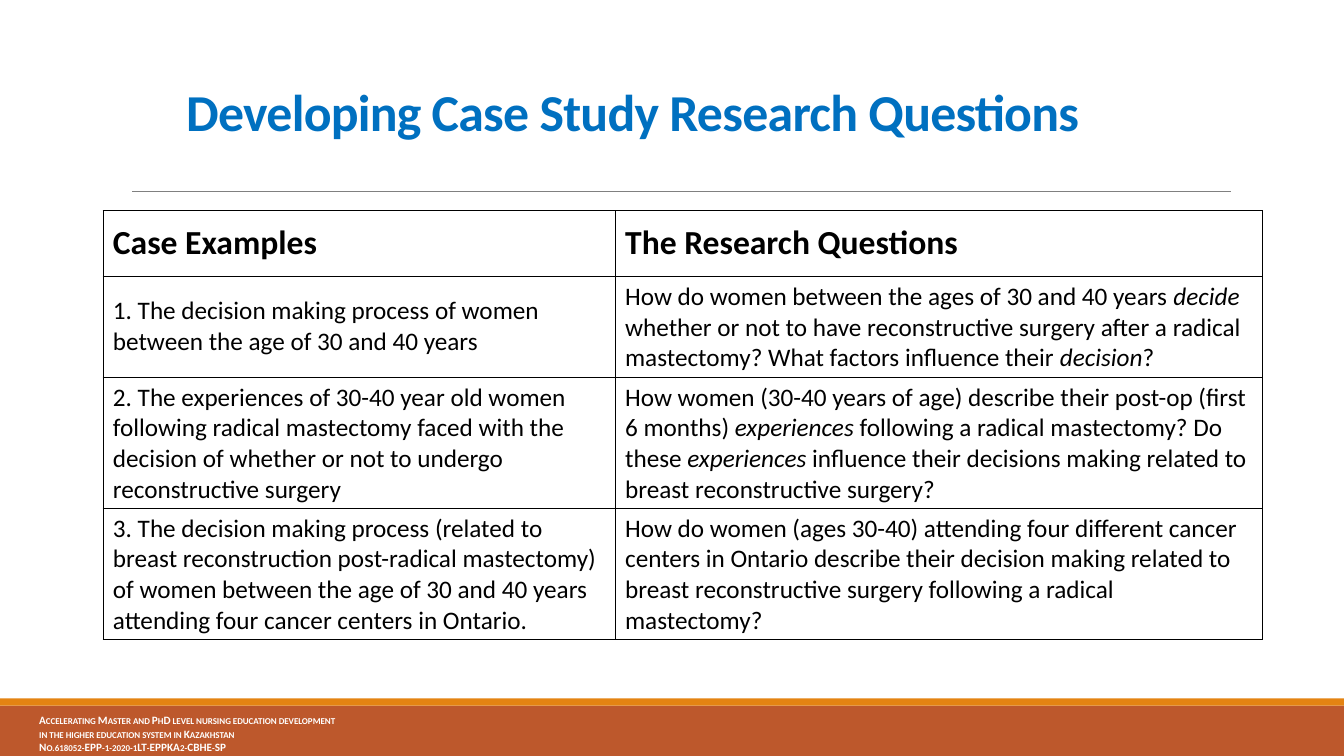
from dataclasses import dataclass
from lxml.etree import SubElement
from pptx import Presentation
from pptx.dml.color import RGBColor
from pptx.enum.shapes import MSO_CONNECTOR, MSO_SHAPE
from pptx.enum.text import MSO_ANCHOR, PP_ALIGN
from pptx.oxml.ns import qn
from pptx.util import Inches, Pt


@dataclass
class Theme:
    font: str = "Calibri"
    title: str = "0070C0"
    ink: str = "000000"
    paper: str = "FFFFFF"
    rule: str = "808080"
    rust: str = "BD582C"
    amber: str = "E48312"
    large: int = 37
    head: int = 24
    body: int = 18
    small: int = 8


class Deck:
    """Draws each kind of element on the current slide in one theme."""

    def __init__(self, theme):
        self.theme = theme
        self.file = Presentation()
        self.file.slide_width = Inches(13.33)
        self.file.slide_height = Inches(7.5)
        self.slide = self.file.slides.add_slide(self.file.slide_layouts[6])

    def band(self, top, height, color):
        shape = self.slide.shapes.add_shape(
            MSO_SHAPE.RECTANGLE, 0, Inches(top), self.file.slide_width, Inches(height))
        shape.shadow.inherit = False
        shape.fill.solid()
        shape.fill.fore_color.rgb = RGBColor.from_string(color)
        shape.line.fill.background()

    def rule(self, left, right, top):
        line = self.slide.shapes.add_connector(
            MSO_CONNECTOR.STRAIGHT, Inches(left), Inches(top), Inches(right), Inches(top))
        line.line.color.rgb = RGBColor.from_string(self.theme.rule)
        line.line.width = Pt(0.5)
        SubElement(line._element.spPr, qn("a:effectLst"))

    def run(self, para, text, size, color, bold=False, italic=False, **extra):
        run = para.add_run()
        run.text = text
        font = run.font
        font.name, font.size = self.theme.font, Pt(size)
        font.bold, font.italic = bold, italic
        font.color.rgb = RGBColor.from_string(color)
        for key, value in extra.items():
            run._r.get_or_add_rPr().set(key, value)

    def text(self, box, lines, size, color, align=PP_ALIGN.LEFT,
             anchor=MSO_ANCHOR.TOP, space=1.0, **extra):
        frame = self.slide.shapes.add_textbox(*map(Inches, box)).text_frame
        frame.word_wrap = True
        frame.vertical_anchor = anchor
        for i, line in enumerate(lines):
            para = frame.add_paragraph() if i else frame.paragraphs[0]
            para.alignment, para.line_spacing = align, space
            self.run(para, line, size, color, bold=True, **extra)

    def border(self, cell):
        props = cell._tc.get_or_add_tcPr()
        for side in "LRTB":
            line = SubElement(props, qn(f"a:ln{side}"), w=str(Pt(0.48)))
            fill = SubElement(line, qn("a:solidFill"))
            SubElement(fill, qn("a:srgbClr"), val=self.theme.ink)

    def table(self, box, wide, high, rows):
        grid = self.slide.shapes.add_table(
            len(rows), len(wide), *map(Inches, box)).table
        for col, width in zip(grid.columns, wide):
            col.width = Inches(width)
        for i, (row, height) in enumerate(zip(rows, high)):
            grid.rows[i].height = Inches(height)
            size = self.theme.body if i else self.theme.head
            for j, words in enumerate(row):
                cell = grid.cell(i, j)
                self.border(cell)
                cell.fill.background()
                cell.vertical_anchor = MSO_ANCHOR.MIDDLE
                para = cell.text_frame.paragraphs[0]
                for k, part in enumerate(words.split("*")):
                    self.run(para, part, size, self.theme.ink, i == 0, k % 2 == 1)


ROWS = [
    ("Case Examples", "The Research Questions"),
    ("1. The decision making process of women between the age of 30 and 40 years",
     "How do women between the ages of 30 and 40 years *decide *whether or not to have "
     "reconstructive surgery after a radical mastectomy? What factors influence their "
     "*decision*?"),
    ("2. The experiences of 30-40 year old women following radical mastectomy faced with "
     "the decision of whether or not to undergo reconstructive surgery",
     "How women (30-40 years of age) describe their post-op (first 6 months) *experiences "
     "*following a radical mastectomy? Do these *experiences *influence their decisions "
     "making related to breast reconstructive surgery?"),
    ("3. The decision making process (related to breast reconstruction post-radical "
     "mastectomy) of women between the age of 30 and 40 years attending four cancer "
     "centers in Ontario.",
     "How do women (ages 30-40) attending four different cancer centers in Ontario "
     "describe their decision making related to breast reconstructive surgery following "
     "a radical mastectomy?"),
]
FOOT = [
    "Accelerating Master and PhD level nursing education development",
    "in the higher education system in Kazakhstan",
    "No.618052-EPP-1-2020-1LT-EPPKA2-CBHE-SP",
]


def main():
    theme = Theme()
    deck = Deck(theme)
    deck.band(7, 0.5, theme.rust)
    deck.band(6.93, 0.07, theme.amber)
    deck.rule(1.31, 12.21, 1.9)
    deck.text((0.29, 7.03, 4.59, 0.5), FOOT, theme.small, theme.paper, cap="small")
    deck.text((0.91, 0.6, 10.84, 1.1), ["Developing Case Study Research Questions "],
              theme.large, theme.title, PP_ALIGN.CENTER, MSO_ANCHOR.MIDDLE, 0.85, spc="-50")
    deck.table((1.02, 2.09, 11.5, 4.23), (5.08, 6.42), (0.65, 0.9, 1.15, 1.15), ROWS)
    deck.file.save("out.pptx")


if __name__ == "__main__":
    main()
